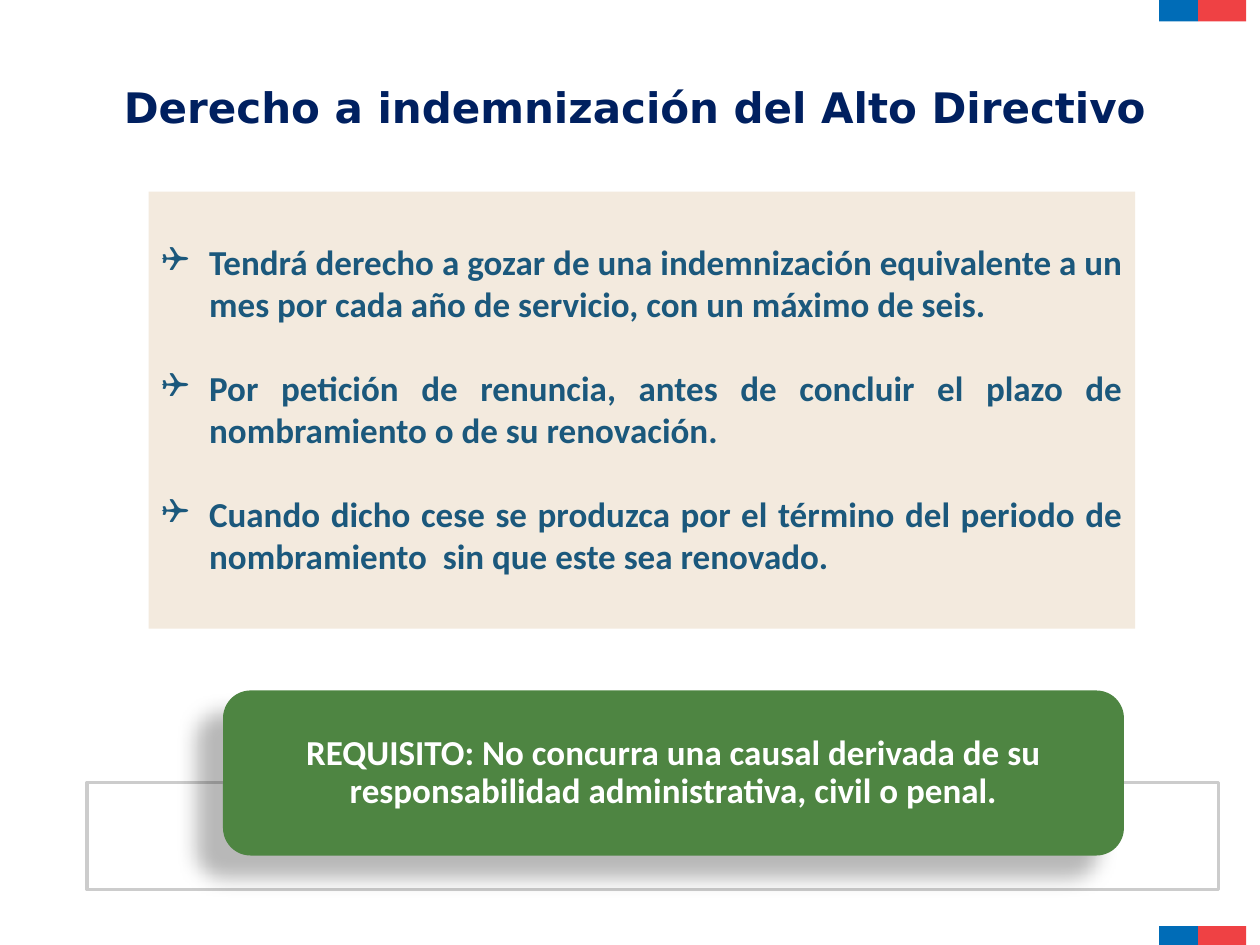
"""Build the slide on the senior manager's right to compensation."""
from lxml import etree
from pptx import Presentation
from pptx.dml.color import RGBColor
from pptx.enum.shapes import MSO_SHAPE
from pptx.enum.text import MSO_ANCHOR, MSO_AUTO_SIZE, PP_ALIGN
from pptx.oxml.ns import qn
from pptx.util import Inches, Pt

RECTANGLE, ROUNDED = MSO_SHAPE.RECTANGLE, MSO_SHAPE.ROUNDED_RECTANGLE
CENTER, JUSTIFY = PP_ALIGN.CENTER, PP_ALIGN.JUSTIFY
MIDDLE, TOP = MSO_ANCHOR.MIDDLE, MSO_ANCHOR.TOP
NO_AUTOFIT = MSO_AUTO_SIZE.NONE

TITLE = "Derecho a indemnización del Alto Directivo"
RIGHTS = [
    "Tendrá derecho a gozar de una indemnización equivalente a un mes por cada año de servicio, con un máximo de seis.",
    "Por petición de renuncia, antes de concluir el plazo de nombramiento o de su renovación.",
    "Cuando dicho cese se produzca por el término del periodo de nombramiento  sin que este sea renovado.",
]
REQUIREMENT = "REQUISITO: No concurra una causal derivada de su responsabilidad administrativa, civil o penal."


def add_box(kind, left, top, width, height, color):
    box = page.shapes.add_shape(kind, Inches(left), Inches(top), Inches(width), Inches(height))
    box.shadow.inherit = False
    box.fill.solid()
    box.fill.fore_color.rgb = RGBColor.from_string(color)
    box.line.fill.background()
    return box


def add_span(para, text, size, font, color):
    span = para.add_run()
    span.text = text
    span.font.size = Pt(size)
    span.font.name = font
    span.font.bold = True
    span.font.color.rgb = RGBColor.from_string(color)


deck = Presentation()
deck.slide_width, deck.slide_height = Inches(10), Inches(7.5)
page = deck.slides.add_slide(deck.slide_layouts[1])

for top in (0, 7.35):
    add_box(RECTANGLE, 9.2, top, 0.31, 0.17, "006CB7")
    add_box(RECTANGLE, 9.51, top, 0.38, 0.17, "EF4144")

title = page.shapes.title
title.left, title.top, title.width, title.height = Inches(0.87), Inches(0.6), Inches(8.34), Inches(0.5)
title.text_frame.word_wrap = False
title.text_frame.auto_size = NO_AUTOFIT
title.text_frame.vertical_anchor = MIDDLE
para = title.text_frame.paragraphs[0]
para.alignment = CENTER
add_span(para, TITLE, 24, "DejaVu Sans", "002060")

rights = page.placeholders[1]
rights.left, rights.top, rights.width, rights.height = Inches(1.18), Inches(1.52), Inches(7.83), Inches(3.47)
rights.fill.solid()
rights.fill.fore_color.rgb = RGBColor.from_string("F3EADE")
frame = rights.text_frame
frame.auto_size = NO_AUTOFIT
frame.vertical_anchor = TOP
frame.margin_top = Inches(0.39)
for index, text in enumerate(RIGHTS):
    para = frame.add_paragraph() if index else frame.paragraphs[0]
    para.alignment = JUSTIFY
    para.space_before = Pt(0)
    para.space_after = Pt(24)
    add_span(para, text, 20, "Calibri", "1B587C")
    properties = para._p.get_or_add_pPr()
    properties.set("marL", str(Inches(0.38)))
    properties.set("indent", str(Inches(-0.38)))
    etree.SubElement(properties, qn("a:buFont")).set("typeface", "Wingdings")
    etree.SubElement(properties, qn("a:buChar")).set("char", "❑")

outline = add_box(RECTANGLE, 0.69, 6.21, 8.98, 0.85, "FFFFFF")
outline.line.color.rgb = RGBColor.from_string("CCCCCC")
outline.line.width = Pt(2)
white = outline.fill._xPr.find(qn("a:solidFill"))[0]
etree.SubElement(white, qn("a:alpha")).set("val", "90000")

requirement = add_box(ROUNDED, 1.77, 5.48, 7.15, 1.31, "4E8542")
effects = requirement._element.spPr.find(qn("a:effectLst"))
shadow = etree.SubElement(effects, qn("a:outerShdw"), blurRad=str(Pt(11.8)), dist=str(Pt(19.7)),
                          dir=str(141 * 60000), algn="ctr", rotWithShape="0")
black = etree.SubElement(shadow, qn("a:srgbClr"), val="000000")
etree.SubElement(black, qn("a:alpha")).set("val", "28000")
frame = requirement.text_frame
frame.word_wrap = True
frame.vertical_anchor = MIDDLE
frame.margin_left = frame.margin_right = Inches(0.3)
para = frame.paragraphs[0]
para.alignment = CENTER
para.line_spacing = 0.9
add_span(para, REQUIREMENT, 20, "Calibri", "FFFFFF")

deck.save("out.pptx")
